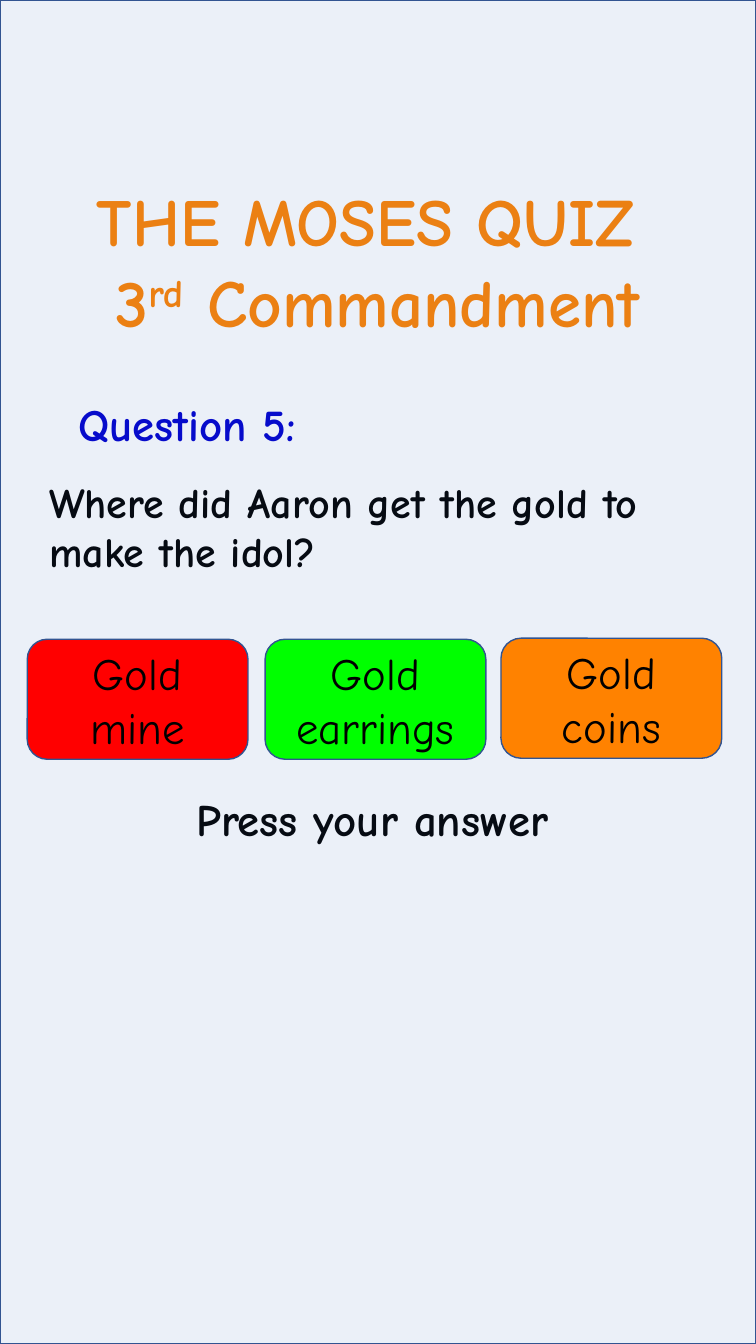
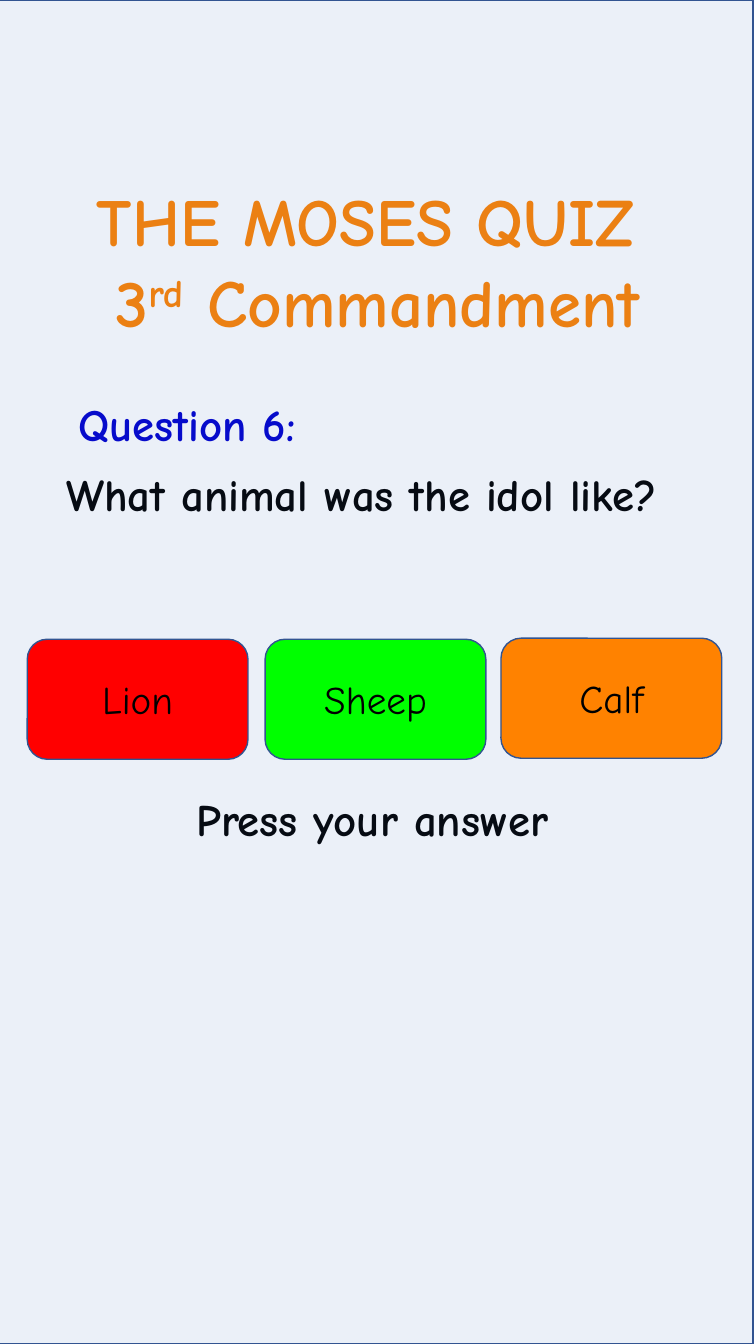
import pptx
import pptx.dml.color
import pptx.enum.shapes
import pptx.enum.text
import pptx.oxml
import pptx.oxml.ns
import pptx.util
from lxml import etree

PX = 9144  # 100 px to the inch
SLIDE_WIDTH, SLIDE_HEIGHT = 750, 1333
FONT = "Comic Neue"

RGB = pptx.dml.color.RGBColor
ORANGE = RGB(0xFF, 0x82, 0x00)
RED = RGB(0xFF, 0x00, 0x00)
GREEN = RGB(0x00, 0xFF, 0x00)
BLUE = RGB(0x00, 0x00, 0xCC)
BLACK = RGB(0x00, 0x00, 0x00)
TINT = RGB(0x44, 0x72, 0xC4)
BORDER = RGB(0x32, 0x54, 0x91)

CENTER = pptx.enum.text.PP_ALIGN.CENTER
LEFT = pptx.enum.text.PP_ALIGN.LEFT
SHAPE = pptx.enum.shapes.MSO_SHAPE
Pt = pptx.util.Pt
qn = pptx.oxml.ns.qn

TITLE_LINES = [
    [("THE MOSES QUIZ ", 0)],
    [("3", 0), ("rd", 30000), (" Commandment", 0)],
]
TITLE_OUTLINE = (
    f'<a:ln {pptx.oxml.ns.nsdecls("a")} w="13462"><a:solidFill>'
    f'<a:srgbClr val="{RED}"/></a:solidFill></a:ln>'
)
BUTTONS = [(27, 634, RED), (263, 634, GREEN), (497, 633, ORANGE)]
QUESTIONS = [
    {
        "heading": "Question 5:",
        "text": "Where did Aaron get the gold to make the idol?",
        "box": (39, 469, 692, 146),
        "size": 30,
        "line_spacing": Pt(35),
        "answers": ["Gold mine", "Gold earrings", "Gold coins"],
        "answer_size": 32,
        "panel_left": 0,
    },
    {
        "heading": "Question 6:",
        "text": "What animal was the idol like?",
        "box": (56, 456, 660, 146),
        "size": 32,
        "line_spacing": Pt(40),
        "answers": ["Lion", "Sheep", "Calf"],
        "answer_size": 28,
        "panel_left": -3,
    },
]


def add_run(paragraph, text, size, color, bold=True):
    run = paragraph.add_run()
    run.text = text
    run.font.name = FONT
    run.font.size = Pt(size)
    run.font.bold = bold
    run.font.color.rgb = color
    return run


def add_text(slide, box, wrap, alignment):
    """Add a text box and return its text frame with the first paragraph aligned."""
    frame = slide.shapes.add_textbox(*[value * PX for value in box]).text_frame
    frame.word_wrap = wrap
    if not wrap:
        frame.auto_size = pptx.enum.text.MSO_AUTO_SIZE.SHAPE_TO_FIT_TEXT
    frame.paragraphs[0].alignment = alignment
    return frame


presentation = pptx.Presentation()
presentation.slide_width = SLIDE_WIDTH * PX
presentation.slide_height = SLIDE_HEIGHT * PX

for question in QUESTIONS:
    slide = presentation.slides.add_slide(presentation.slide_layouts[6])

    title = add_text(slide, (30, 173, 689, 172), False, CENTER)
    for index, line in enumerate(TITLE_LINES):
        paragraph = title.paragraphs[0] if index == 0 else title.add_paragraph()
        paragraph.alignment = CENTER
        for text, baseline in line:
            run = add_run(paragraph, text, 48, ORANGE)
            properties = run._r.get_or_add_rPr()
            properties.insert(0, pptx.oxml.parse_xml(TITLE_OUTLINE))
            if baseline:
                properties.set("baseline", str(baseline))

    heading = add_text(slide, (47, 389, 277, 64), False, CENTER)
    add_run(heading.paragraphs[0], question["heading"], 32, BLUE)

    for text, box, size, spacing in [
        (question["text"], question["box"], question["size"], question["line_spacing"]),
        ("Press your answer", (185, 786, 422, 72), 32, 0.9),
    ]:
        paragraph = add_text(slide, box, True, LEFT).paragraphs[0]
        paragraph.line_spacing = spacing
        paragraph.space_before = Pt(7.5)
        add_run(paragraph, text, size, BLACK)

    panel = slide.shapes.add_shape(
        SHAPE.RECTANGLE, question["panel_left"] * PX, 0, SLIDE_WIDTH * PX, SLIDE_HEIGHT * PX
    )
    panel.fill.solid()
    panel.fill.fore_color.rgb = TINT
    tint = panel._element.spPr.find(qn("a:solidFill")).find(qn("a:srgbClr"))
    etree.SubElement(tint, qn("a:alpha")).set("val", "10000")
    outlined = [panel]

    for (left, top, color), answer in zip(BUTTONS, question["answers"]):
        button = slide.shapes.add_shape(
            SHAPE.ROUNDED_RECTANGLE, left * PX, top * PX, 219 * PX, 119 * PX
        )
        button.fill.solid()
        button.fill.fore_color.rgb = color
        frame = button.text_frame
        frame.word_wrap = True
        frame.vertical_anchor = pptx.enum.text.MSO_ANCHOR.MIDDLE
        frame.paragraphs[0].alignment = CENTER
        add_run(frame.paragraphs[0], answer, question["answer_size"], BLACK, bold=False)
        outlined.append(button)

    for shape in outlined:
        shape.shadow.inherit = False
        shape.line.color.rgb = BORDER
        shape.line.width = Pt(1)

presentation.save("out.pptx")
